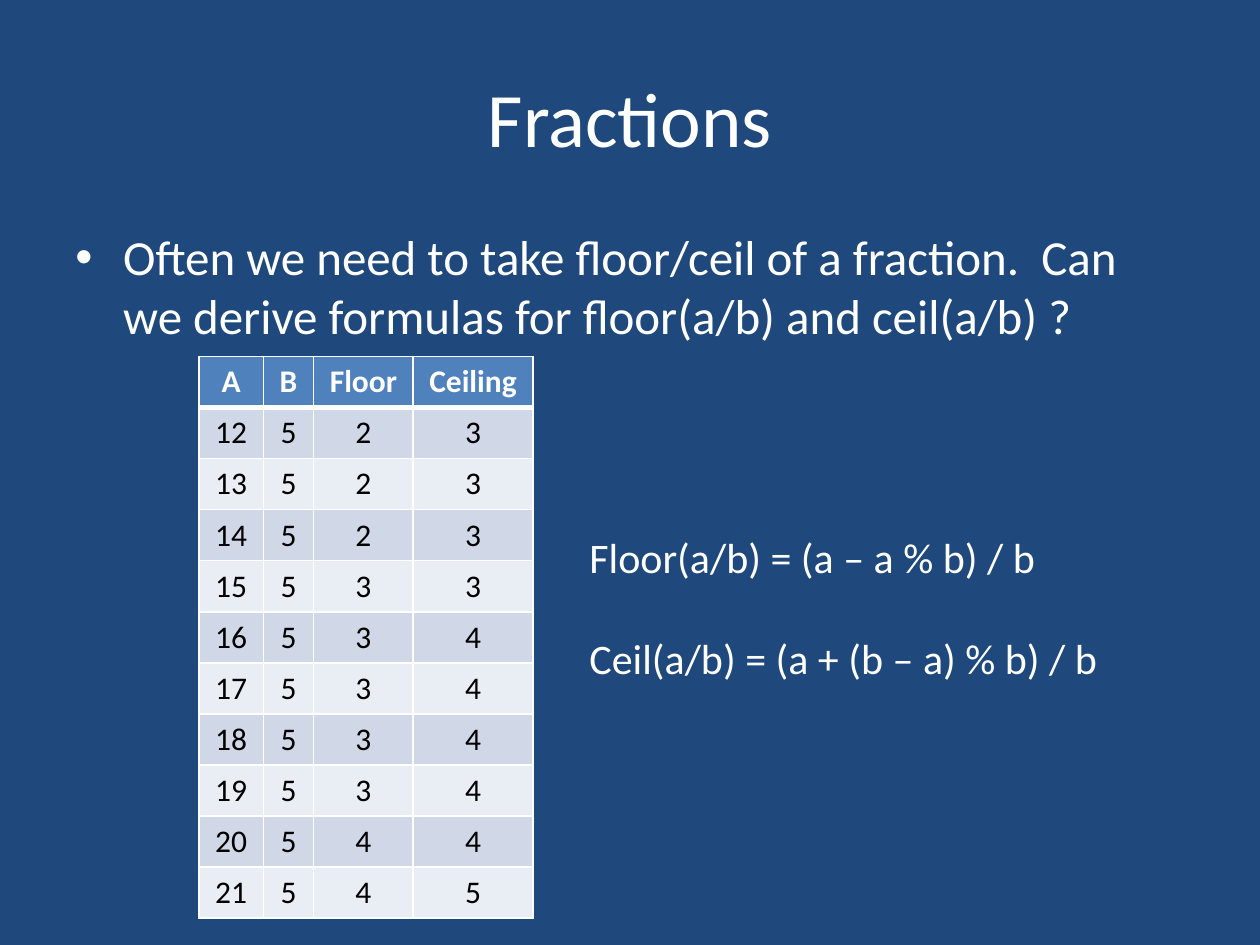
"""Build the Fractions slide: a question, a floor/ceiling table and two formulas."""
from lxml.etree import SubElement
from pptx import Presentation
from pptx.dml.color import RGBColor
from pptx.enum.text import MSO_ANCHOR, PP_ALIGN
from pptx.oxml.ns import qn
from pptx.util import Inches, Pt

NAVY = RGBColor(0x1F, 0x49, 0x7D)
BLUE = RGBColor(0x4F, 0x81, 0xBD)
BANDS = RGBColor(0xE9, 0xED, 0xF4), RGBColor(0xD0, 0xD8, 0xE8)
WHITE = RGBColor(0xFF, 0xFF, 0xFF)
BLACK = RGBColor(0, 0, 0)

TITLE = "Fractions"
QUESTION = ("Often we need to take floor/ceil of a fraction.  "
            "Can we derive formulas for floor(a/b) and ceil(a/b) ?")
FORMULAS = ["Floor(a/b) = (a – a % b) / b", "Ceil(a/b) = (a + (b – a) % b) / b"]
ROWS = [
    ("A", "B", "Floor", "Ceiling"),
    (12, 5, 2, 3),
    (13, 5, 2, 3),
    (14, 5, 2, 3),
    (15, 5, 3, 3),
    (16, 5, 3, 4),
    (17, 5, 3, 4),
    (18, 5, 3, 4),
    (19, 5, 3, 4),
    (20, 5, 4, 4),
    (21, 5, 4, 5),
]
COL_WIDTHS = [0.51, 0.4, 0.79, 0.95]
TABLE_BOX = 1.58, 2.83, sum(COL_WIDTHS), 4.46


def box(dims):
    return [Inches(d) for d in dims]


def write(p, text, size, color=WHITE, bold=False, **layout):
    r = p.add_run()
    r.text = text
    for name, value in dict(name="Calibri", size=Pt(size), bold=bold).items():
        setattr(r.font, name, value)
    r.font.color.rgb = color
    for name, value in layout.items():
        setattr(p, name, value)


def add_text(s, dims):
    tf = s.shapes.add_textbox(*box(dims)).text_frame
    tf.word_wrap = True
    return tf


def add_bullet(p, indent):
    pPr = p._p.get_or_add_pPr()
    pPr.set("marL", str(Inches(indent)))
    pPr.set("indent", str(-Inches(indent)))
    SubElement(pPr, qn("a:buFont"), typeface="Arial")
    SubElement(pPr, qn("a:buChar"), char="•")


def add_borders(cell, top, bottom):
    tcPr = cell._tc.get_or_add_tcPr()
    for side, width in dict(L=1, R=1, T=top, B=bottom).items():
        ln = SubElement(tcPr, qn(f"a:ln{side}"), w=str(Pt(width)))
        fill = SubElement(ln, qn("a:solidFill"))
        SubElement(fill, qn("a:srgbClr"), val=str(WHITE))


def add_grid(s):
    table = s.shapes.add_table(len(ROWS), len(COL_WIDTHS), *box(TABLE_BOX)).table
    for col, width in zip(table.columns, COL_WIDTHS):
        col.width = Inches(width)
    for i, row in enumerate(ROWS):
        table.rows[i].height = Inches(TABLE_BOX[3] / len(ROWS))
        header = i == 0
        for j, value in enumerate(row):
            cell = table.cell(i, j)
            add_borders(cell, top=3 if i == 1 else 1, bottom=3 if header else 1)
            cell.fill.solid()
            cell.fill.fore_color.rgb = BLUE if header else BANDS[i % 2]
            write(cell.text_frame.paragraphs[0], str(value), 18,
                  WHITE if header else BLACK, header, alignment=PP_ALIGN.CENTER)


def main():
    prs = Presentation()
    prs.slide_width, prs.slide_height = box((10, 7.5))
    s = prs.slides.add_slide(prs.slide_layouts[5])
    s.background.fill.solid()
    s.background.fill.fore_color.rgb = NAVY

    title = s.shapes.title
    title.left, title.top, title.width, title.height = box((0.5, 0.3, 9, 1.25))
    title.text_frame.vertical_anchor = MSO_ANCHOR.MIDDLE
    write(title.text_frame.paragraphs[0], TITLE, 44, alignment=PP_ALIGN.CENTER)

    p = add_text(s, (0.5, 1.75, 9, 4.95)).paragraphs[0]
    write(p, QUESTION, 28, space_before=Pt(5.6))
    add_bullet(p, 0.38)

    add_grid(s)

    tf = add_text(s, (4.58, 4.17, 4.33, 1.31))
    write(tf.paragraphs[0], FORMULAS[0], 24)
    write(tf.add_paragraph(), FORMULAS[1], 24, space_before=Pt(29))

    prs.save("out.pptx")


if __name__ == "__main__":
    main()
